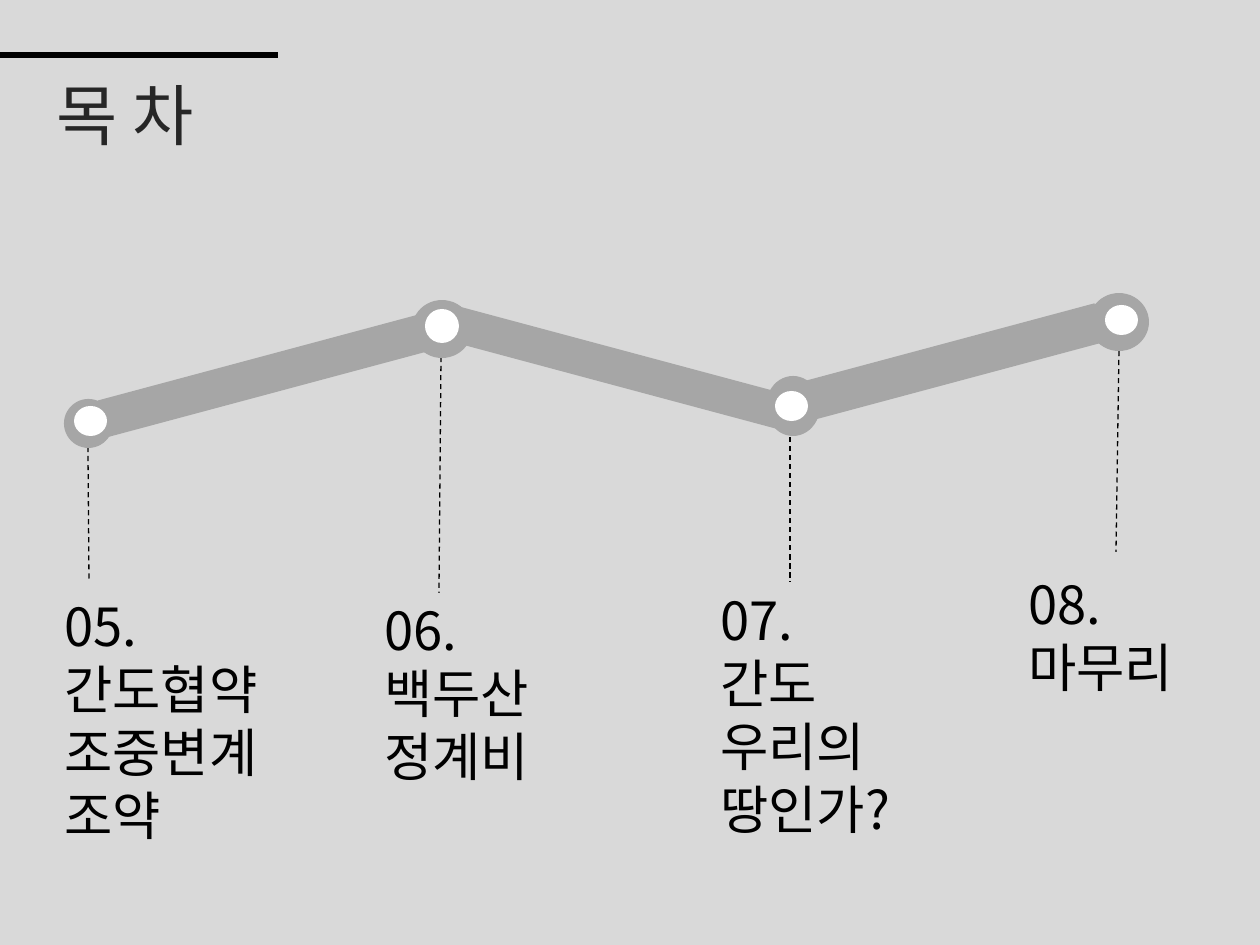
from lxml.etree import SubElement
from pptx import Presentation
from pptx.dml.color import RGBColor
from pptx.enum.dml import MSO_LINE
from pptx.enum.shapes import MSO_CONNECTOR, MSO_SHAPE as SHAPE
from pptx.enum.text import MSO_ANCHOR, PP_ALIGN
from pptx.oxml.ns import qn
from pptx.util import Pt

PX = 914400 / 126
FONT = "Noto Sans CJK KR"
COLORS = {
    "background": "D9D9D9",
    "road": "A6A6A6",
    "dot": "FFFFFF",
    "line": "000000",
    "text": "000000",
    "title": "262626",
}


def px(*lengths):
    return [round(length * PX) for length in lengths]


def write(shape, text, size=30, color="text"):
    frame = shape.text_frame
    frame.word_wrap = True
    frame.vertical_anchor = MSO_ANCHOR.TOP
    frame.text = text
    for paragraph in frame.paragraphs:
        paragraph.alignment = PP_ALIGN.LEFT
        for run in paragraph.runs:
            run.font.size = Pt(size)
            run.font.name = FONT
            run.font.color.rgb = RGBColor.from_string(COLORS[color])
            SubElement(run._r.get_or_add_rPr(), qn("a:ea"), typeface=FONT)


prs = Presentation()
prs.slide_width, prs.slide_height = px(1260, 945)
slide = prs.slides.add_slide(prs.slide_layouts[5])
slide.background.fill.solid()
slide.background.fill.fore_color.rgb = RGBColor.from_string(COLORS["background"])

# Title
title = slide.shapes.title
title.left, title.top, title.width, title.height = px(44, 68, 953, 93)
write(title, "목 차", size=38, color="title")

# Title rule and the dashed leaders from each stop to its text
lines = [
    (0, 55, 278, 55, 3, None),
    (88, 447, 89, 582, 0.75, MSO_LINE.DASH),
    (441, 357, 439, 593, 0.75, MSO_LINE.DASH),
    (790, 428, 790, 582, 0.75, MSO_LINE.DASH),
    (1119, 351, 1116, 552, 0.75, MSO_LINE.DASH),
]
for x1, y1, x2, y2, weight, dash in lines:
    line = slide.shapes.add_connector(MSO_CONNECTOR.STRAIGHT, *px(x1, y1, x2, y2))
    line.line.color.rgb = RGBColor.from_string(COLORS["line"])
    line.line.width = Pt(weight)
    line.line.dash_style = dash
    SubElement(line._element.spPr, qn("a:effectLst"))

# Zigzag road, the round joints on it, and the white stops on top
road_parts = [
    (SHAPE.RECTANGLE, 793, 343, 312, 40, 345, "road"),
    (SHAPE.RECTANGLE, 447, 350, 344, 36, 15, "road"),
    (SHAPE.RECTANGLE, 97, 356, 339, 38, 345, "road"),
    (SHAPE.OVAL, 64, 399, 49, 49, 0, "road"),
    (SHAPE.OVAL, 412, 300, 60, 58, 0, "road"),
    (SHAPE.OVAL, 766, 376, 54, 60, 0, "road"),
    (SHAPE.OVAL, 1089, 293, 60, 58, 0, "road"),
    (SHAPE.OVAL, 74, 406, 33, 30, 0, "dot"),
    (SHAPE.OVAL, 425, 309, 34, 34, 0, "dot"),
    (SHAPE.OVAL, 775, 391, 33, 30, 0, "dot"),
    (SHAPE.OVAL, 1105, 305, 33, 30, 0, "dot"),
]
for kind, left, top, width, height, angle, color in road_parts:
    part = slide.shapes.add_shape(kind, *px(left, top, width, height))
    part.rotation = angle
    part.fill.solid()
    part.fill.fore_color.rgb = RGBColor.from_string(COLORS[color])
    part.line.fill.background()
    part.shadow.inherit = False

# Contents entries
entries = [
    (52, 588, 249, 267, "05.\n간도협약 조중변계조약"),
    (372, 592, 174, 267, "06.\n백두산정계비"),
    (708, 582, 213, 267, "07.\n간도\n우리의 땅인가?"),
    (1016, 566, 213, 140, "08.\n마무리"),
]
for left, top, width, height, text in entries:
    write(slide.shapes.add_textbox(*px(left, top, width, height)), text)

prs.save("out.pptx")
